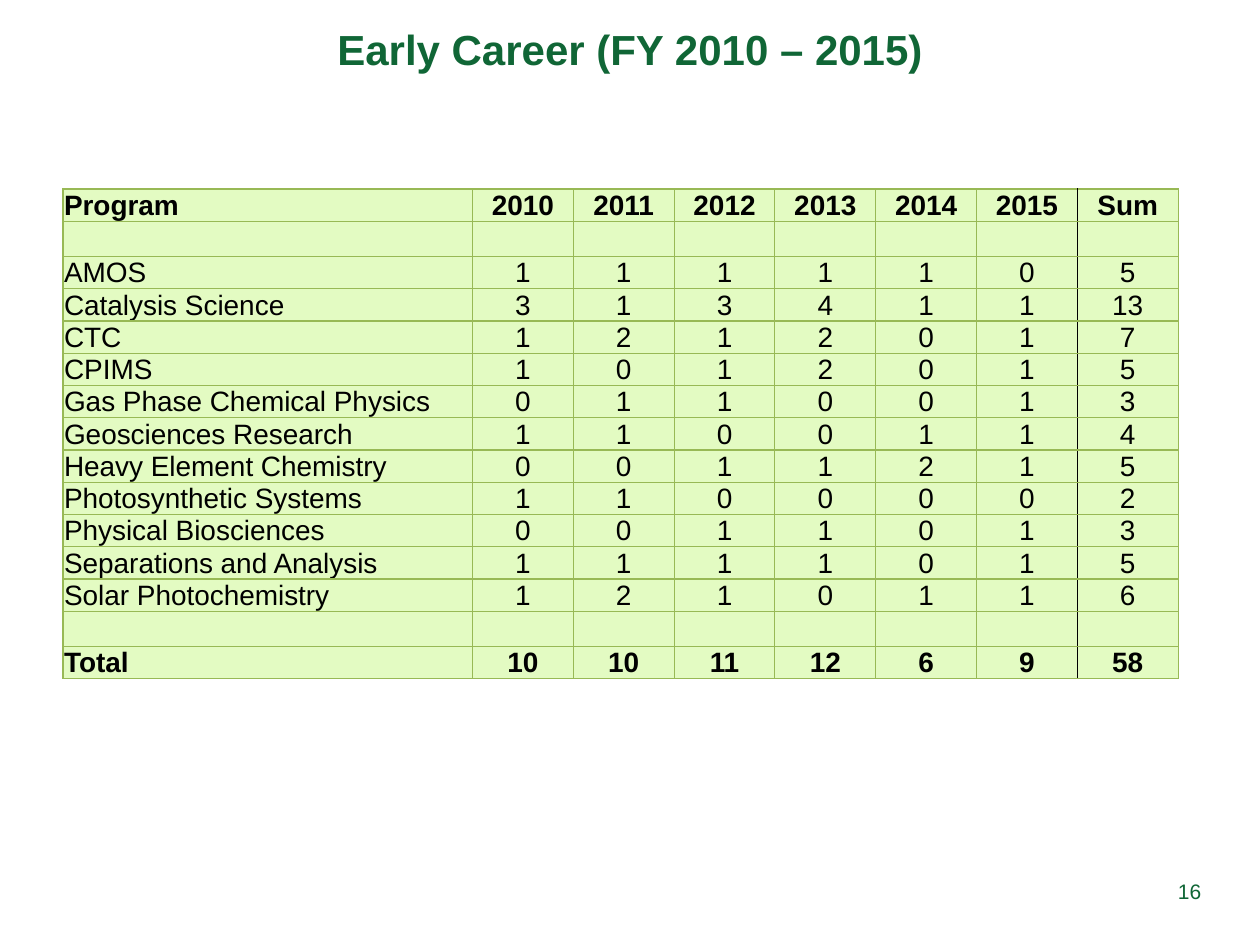
from lxml import etree
from pptx import Presentation
from pptx.dml.color import RGBColor
from pptx.enum.text import MSO_ANCHOR, PP_ALIGN
from pptx.oxml.ns import qn
from pptx.util import Pt

LEFT, CENTER = PP_ALIGN.LEFT, PP_ALIGN.CENTER
MIDDLE, BOTTOM = MSO_ANCHOR.MIDDLE, MSO_ANCHOR.BOTTOM
TITLE_ONLY = 5

TITLE = "Early Career (FY 2010 – 2015)"
PAGE_NUMBER = "16"
HEADER = ("Program", 2010, 2011, 2012, 2013, 2014, 2015, "Sum")
SPACER = ("",) * len(HEADER)
AWARDS = [
    ("AMOS", 1, 1, 1, 1, 1, 0, 5),
    ("Catalysis Science", 3, 1, 3, 4, 1, 1, 13),
    ("CTC", 1, 2, 1, 2, 0, 1, 7),
    ("CPIMS", 1, 0, 1, 2, 0, 1, 5),
    ("Gas Phase Chemical Physics", 0, 1, 1, 0, 0, 1, 3),
    ("Geosciences Research", 1, 1, 0, 0, 1, 1, 4),
    ("Heavy Element Chemistry", 0, 0, 1, 1, 2, 1, 5),
    ("Photosynthetic Systems", 1, 1, 0, 0, 0, 0, 2),
    ("Physical Biosciences", 0, 0, 1, 1, 0, 1, 3),
    ("Separations and Analysis", 1, 1, 1, 1, 0, 1, 5),
    ("Solar Photochemistry", 1, 2, 1, 0, 1, 1, 6),
]
TOTAL = ("Total", 10, 10, 11, 12, 6, 9, 58)
ROWS = [HEADER, SPACER, *AWARDS, SPACER, TOTAL]

THEME = {
    "font": "Arial",
    "green": "106636",
    "ink": "000000",
    "cell": "E3FBC2",
    "grid": "98B955",
    "title_size": 24,
    "table_size": 16,
    "number_size": 12,
}
PROGRAM_WIDTH, COUNT_WIDTH, ROW_HEIGHT = 234, 57.6, 18.43
TABLE_LEFT, TABLE_TOP = 36, 108


def add_run(paragraph, text, size, color, bold=False):
    run = paragraph.add_run()
    run.text = text
    run.font.name = THEME["font"]
    run.font.size = Pt(size)
    run.font.bold = bold
    run.font.color.rgb = RGBColor.from_string(color)


def set_border(cell, side, color, width):
    """Draw one cell edge; call in the order L, R, T, B."""
    line = etree.SubElement(cell._tc.get_or_add_tcPr(), qn(f"a:ln{side}"), w=str(Pt(width)))
    fill = etree.SubElement(line, qn("a:solidFill"))
    etree.SubElement(fill, qn("a:srgbClr"), val=color)


def format_cell(cell, column):
    sum_column = len(HEADER) - 1
    divider_side = {sum_column - 1: "R", sum_column: "L"}.get(column)
    for side in "LRTB":
        if side == divider_side:
            set_border(cell, side, THEME["ink"], 1)
        else:
            set_border(cell, side, THEME["grid"], 0.75)
    cell.fill.solid()
    cell.fill.fore_color.rgb = RGBColor.from_string(THEME["cell"])
    cell.margin_left = cell.margin_right = cell.margin_top = Pt(0.6)
    cell.margin_bottom = 0
    cell.vertical_anchor = BOTTOM


def fill_cell(cell, value, column, bold):
    paragraph = cell.text_frame.paragraphs[0]
    paragraph.alignment = CENTER if column else LEFT
    if value == "":
        # The end mark's size keeps an empty row as low as the others.
        etree.SubElement(paragraph._p, qn("a:endParaRPr"), sz=str(THEME["table_size"] * 100))
    else:
        add_run(paragraph, str(value), THEME["table_size"], THEME["ink"], bold)


def add_title(slide):
    title = slide.shapes.title
    title.left, title.top, title.width, title.height = Pt(0), Pt(-17.28), Pt(720), Pt(90)
    title.text_frame.vertical_anchor = MIDDLE
    paragraph = title.text_frame.paragraphs[0]
    paragraph.alignment = CENTER
    add_run(paragraph, TITLE, THEME["title_size"], THEME["green"], True)


def add_awards_table(slide):
    widths = [PROGRAM_WIDTH] + [COUNT_WIDTH] * (len(HEADER) - 1)
    table = slide.shapes.add_table(
        len(ROWS), len(HEADER), Pt(TABLE_LEFT), Pt(TABLE_TOP),
        Pt(sum(widths)), Pt(ROW_HEIGHT * len(ROWS))).table
    table.first_row = table.horz_banding = False
    for column, width in zip(table.columns, widths):
        column.width = Pt(width)
    for row, values in enumerate(ROWS):
        table.rows[row].height = Pt(ROW_HEIGHT)
        for column, value in enumerate(values):
            cell = table.cell(row, column)
            format_cell(cell, column)
            fill_cell(cell, value, column, values in (HEADER, TOTAL))


def add_page_number(slide):
    box = slide.shapes.add_textbox(Pt(666), Pt(498.24), Pt(28.08), Pt(21.6))
    box.text_frame.word_wrap = False
    add_run(box.text_frame.paragraphs[0], PAGE_NUMBER, THEME["number_size"], THEME["green"])


def main():
    presentation = Presentation()
    presentation.slide_width, presentation.slide_height = Pt(720), Pt(540)
    slide = presentation.slides.add_slide(presentation.slide_layouts[TITLE_ONLY])
    add_title(slide)
    add_awards_table(slide)
    add_page_number(slide)
    presentation.save("out.pptx")


if __name__ == "__main__":
    main()
